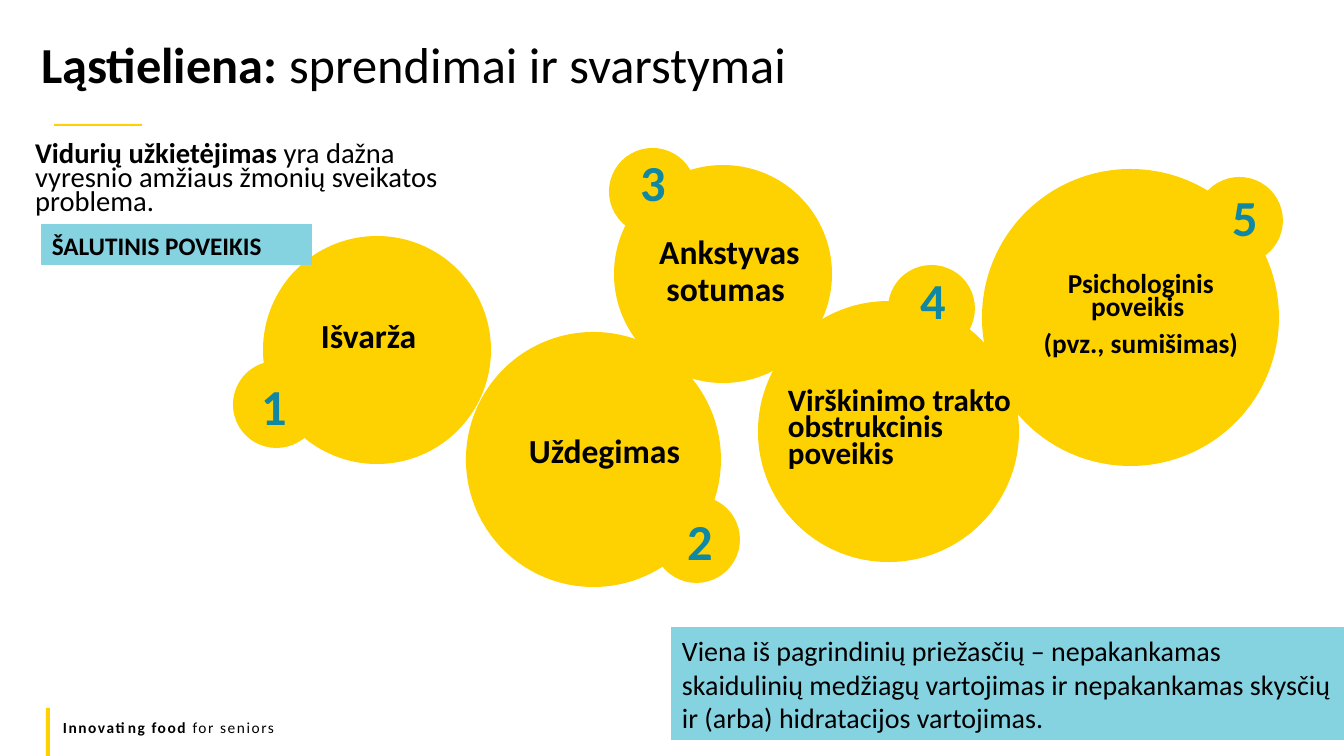
from lxml.etree import SubElement
from pptx import Presentation
from pptx.dml.color import RGBColor
from pptx.enum.shapes import MSO_SHAPE
from pptx.enum.text import MSO_ANCHOR, MSO_AUTO_SIZE, PP_ALIGN
from pptx.oxml.ns import qn
from pptx.util import Pt

PX = 914400 / 100.8
INDENT = 25
BADGE = 87
NUMBER_SIZE = (77, 81)
COLORS = {"yellow": "FED100", "accent": "FFD100", "cyan": "85D2E1",
          "teal": "1188A3", "black": "000000"}

# Each paragraph is a list of (text, bold) runs.
TITLE = [[("Ląstieliena: ", True), ("sprendimai ir svarstymai", False)]]
INTRO = [[("Vidurių užkietėjimas ", True),
          ("yra dažna vyresnio amžiaus žmonių sveikatos problema.", False)]]
FOOTER = [[("Innovating food ", True), ("for seniors", False)]]

# Circle and badge are (left, top[, diameter]); boxes are (left, top, width, height).
EFFECTS = [
    {"lines": ["Išvarža "], "circle": (263, 236, 228), "badge": (233, 361),
     "label": (264, 315, 192, 77), "number": (236, 377),
     "style": {"size": 24, "spacing": 0.9, "margin": INDENT}},
    {"lines": ["Uždegimas"], "circle": (466, 332, 255), "badge": (653, 496),
     "label": (496, 430, 217, 93), "number": (662, 512),
     "style": {"size": 24, "spacing": 0.9}},
    {"lines": ["Ankstyvas sotumas "], "circle": (614, 165, 218), "badge": (609, 148),
     "label": (621, 231, 192, 97), "number": (615, 153),
     "style": {"size": 24, "spacing": 0.9, "margin": INDENT}},
    {"lines": ["Virškinimo trakto obstrukcinis poveikis"],
     "circle": (758, 301, 261), "badge": (888, 265),
     "label": (753, 386, 270, 97), "number": (895, 271),
     "style": {"size": 22.2, "spacing": 0.7, "margin": INDENT, "align": PP_ALIGN.LEFT}},
    {"lines": ["Psichologinis poveikis ", "(pvz., sumišimas)"],
     "circle": (982, 169, 297), "badge": (1196, 177),
     "label": (1000, 270, 257, 123), "number": (1207, 188),
     "style": {"size": 19.5, "spacing": 0.7, "margin": INDENT}},
]
BANNERS = [
    ((42, 225, 270, 40), [[("ŠALUTINIS POVEIKIS", True)]], 18),
    ((672, 628, 672, 112),
     [[("Viena iš pagrindinių priežasčių – nepakankamas skaidulinių medžiagų "
        "vartojimas ir nepakankamas skysčių ir (arba) hidratacijos vartojimas.",
        False)]], 20),
]
ACCENTS = [(54, 124, 88, 2), (46, 708, 4, 48)]


def rgb(name):
    return RGBColor.from_string(COLORS[name])


def emu(*lengths):
    return [round(n * PX) for n in lengths]


def add_filled(s, kind, box, color, outlined=False):
    sp = s.shapes.add_shape(kind, *emu(*box))
    sp.shadow.inherit = False
    sp.fill.solid()
    sp.fill.fore_color.rgb = rgb(color)
    if outlined:
        sp.line.color.rgb = rgb(color)
        sp.line.width = Pt(0.75)
    else:
        sp.line.fill.background()
    return sp


def write(sp, paragraphs, size, spacing=1.0, color="black", align=PP_ALIGN.LEFT,
          anchor=MSO_ANCHOR.TOP, margin=0, tracking=None):
    tf = sp.text_frame
    frame = {"word_wrap": True, "auto_size": MSO_AUTO_SIZE.NONE,
             "vertical_anchor": anchor}
    for name, value in frame.items():
        setattr(tf, name, value)
    for i, runs in enumerate(paragraphs):
        p = tf.add_paragraph() if i else tf.paragraphs[0]
        pPr = p._p.get_or_add_pPr()
        pPr.set("marL", str(round(margin * PX)))
        pPr.set("indent", "0")
        SubElement(pPr, qn("a:buNone"))
        form = {"alignment": align, "line_spacing": spacing,
                "space_before": Pt(10 if i else 0)}
        for name, value in form.items():
            setattr(p, name, value)
        for text, bold in runs:
            r = p.add_run()
            r.text = text
            font = {"name": "Calibri", "size": Pt(size), "bold": bold}
            for name, value in font.items():
                setattr(r.font, name, value)
            r.font.color.rgb = rgb(color)
            if tracking:
                r.font._element.set("spc", str(tracking))


def place(sp, box):
    sp.left, sp.top, sp.width, sp.height = emu(*box)
    return sp


def add_text(s, box, paragraphs, **style):
    write(s.shapes.add_textbox(*emu(*box)), paragraphs, **style)


def main():
    prs = Presentation()
    prs.slide_width, prs.slide_height = emu(1344, 756)
    s = prs.slides.add_slide(prs.slide_layouts[1])

    write(place(s.shapes.title, (31, 40, 1182, 65)), TITLE, size=36, spacing=0.8)
    write(place(s.placeholders[1], (0, 139, 476, 83)), INTRO,
          size=20.4, spacing=0.7, margin=INDENT)

    for box in ACCENTS:
        add_filled(s, MSO_SHAPE.RECTANGLE, box, "accent")
    add_text(s, (53, 713, 1210, 29), FOOTER, size=11, tracking=110)

    for effect in EFFECTS:
        x, y, d = effect["circle"]
        for box in ((x, y, d, d), (*effect["badge"], BADGE, BADGE)):
            add_filled(s, MSO_SHAPE.OVAL, box, "yellow")
    for number, effect in enumerate(EFFECTS, 1):
        # The badges follow the circles from left to right.
        add_text(s, effect["label"], [[(line, True)] for line in effect["lines"]],
                 **{"align": PP_ALIGN.CENTER, **effect["style"]})
        add_text(s, (*effect["number"], *NUMBER_SIZE), [[(str(number), True)]],
                 size=36, spacing=0.9, color="teal", align=PP_ALIGN.CENTER)

    for box, paragraphs, size in BANNERS:
        sp = add_filled(s, MSO_SHAPE.RECTANGLE, box, "cyan", outlined=True)
        write(sp, paragraphs, size, anchor=MSO_ANCHOR.MIDDLE)

    prs.save("out.pptx")


if __name__ == "__main__":
    main()
